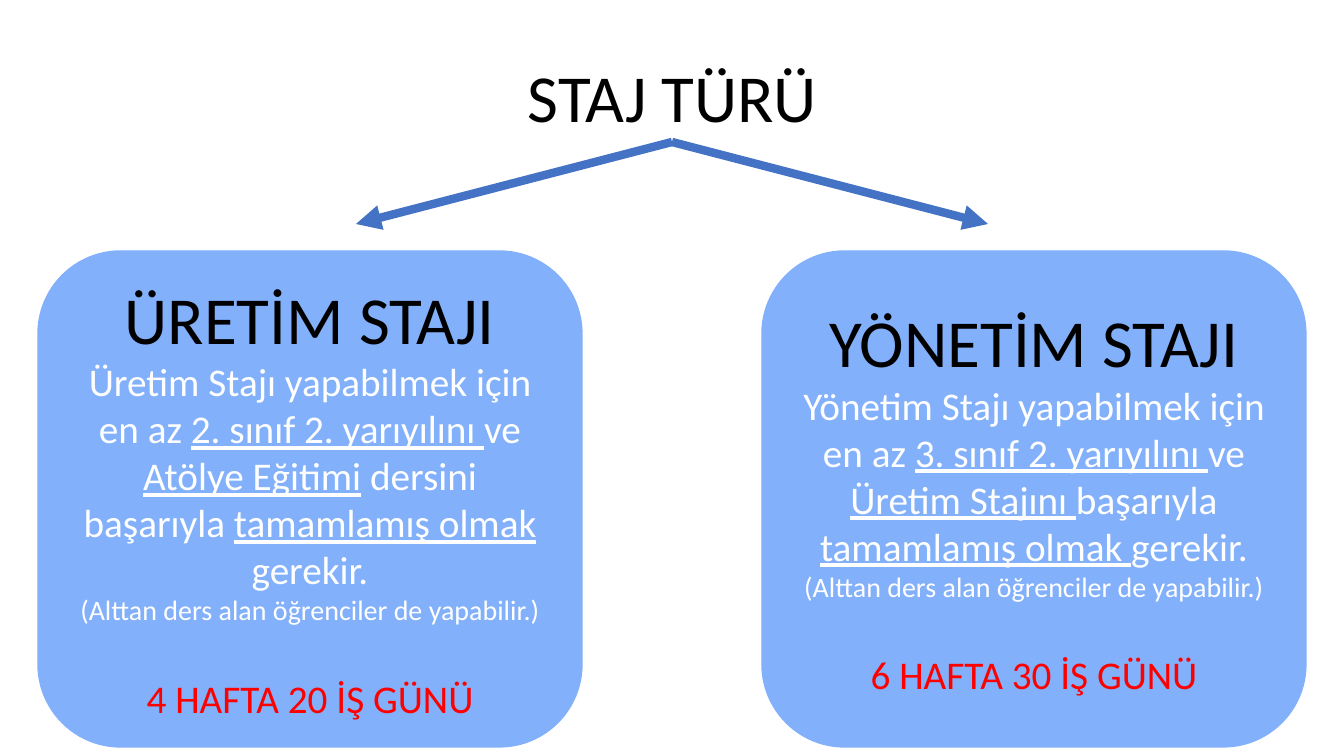
from dataclasses import dataclass

from lxml import etree
from pptx import Presentation
from pptx import util as u
from pptx.dml.color import RGBColor
from pptx.enum import shapes, text
from pptx.oxml.ns import qn

PX = 914400 / 100.8
FONT = "Calibri"
COLOURS = {
    "heading": "000000",
    "body": "FFFFFF",
    "duration": "FF0000",
    "card": "82B0FA",
    "arrow": "4472C4",
}
HEADING_SIZE, BODY_SIZE, NOTE_SIZE = 48, 28, 20
DURATION_GAP = 34
CARD_TOP, CARD_WIDTH, CARD_HEIGHT = 251, 544, 496
FORK_X, FORK_Y, ARROW_END_Y = 672, 142, 224
NOTE = "(Alttan ders alan öğrenciler de yapabilir.)"


@dataclass
class Span:
    text: str
    underline: bool = False


@dataclass
class Internship:
    left: int
    arrow_x: int
    heading: str
    rule: list[Span]
    duration: str


INTERNSHIPS = [
    Internship(
        38, 356, "ÜRETİM STAJI",
        [
            Span("Üretim Stajı yapabilmek için en az "),
            Span("2. sınıf 2. yarıyılını ", True),
            Span("ve "),
            Span("Atölye Eğitimi", True),
            Span(" dersini başarıyla "),
            Span("tamamlamış olmak ", True),
            Span("gerekir."),
        ],
        "4 HAFTA 20 İŞ GÜNÜ",
    ),
    Internship(
        762, 988, "YÖNETİM STAJI",
        [
            Span("Yönetim Stajı yapabilmek için en az "),
            Span("3. sınıf 2. yarıyılını ", True),
            Span("ve"),
            Span(" Üretim Stajını ", True),
            Span("başarıyla"),
            Span(" tamamlamış olmak ", True),
            Span("gerekir."),
        ],
        "6 HAFTA 30 İŞ GÜNÜ",
    ),
]


def px(length: int) -> u.Emu:
    return u.Emu(round(length * PX))


def colour(name: str) -> RGBColor:
    return RGBColor.from_string(COLOURS[name])


def write_paragraph(para, spans: list[Span], size: int, colour_name: str) -> None:
    para.alignment = text.PP_ALIGN.CENTER
    for span in spans:
        run = para.add_run()
        run.text = span.text
        run.font.name = FONT
        run.font.size = u.Pt(size)
        run.font.color.rgb = colour(colour_name)
        if span.underline:
            run.font.underline = True


def add_title(page, words: str) -> None:
    title = page.shapes.title
    title.left, title.top, title.width, title.height = map(px, (503, 50, 339, 92))
    frame = title.text_frame
    frame.auto_size = text.MSO_AUTO_SIZE.NONE
    frame.vertical_anchor = text.MSO_ANCHOR.MIDDLE
    write_paragraph(frame.paragraphs[0], [Span(words)], HEADING_SIZE, "heading")


def add_arrow(page, end_x: int) -> None:
    arrow = page.shapes.add_connector(
        shapes.MSO_CONNECTOR.STRAIGHT,
        px(FORK_X), px(FORK_Y), px(end_x), px(ARROW_END_Y),
    )
    arrow.line.color.rgb = colour("arrow")
    arrow.line.width = u.Pt(6)
    properties = arrow.line._get_or_add_ln()
    etree.SubElement(properties, qn("a:tailEnd"), type="triangle")
    etree.SubElement(properties.getparent(), qn("a:effectLst"))


def add_card(page, internship: Internship) -> None:
    card = page.shapes.add_shape(
        shapes.MSO_SHAPE.ROUNDED_RECTANGLE,
        px(internship.left), px(CARD_TOP), px(CARD_WIDTH), px(CARD_HEIGHT),
    )
    card.shadow.inherit = False
    card.fill.solid()
    card.fill.fore_color.rgb = colour("card")
    card.line.color.rgb = colour("card")
    card.line.width = u.Pt(1)

    frame = card.text_frame
    frame.word_wrap = True
    frame.vertical_anchor = text.MSO_ANCHOR.MIDDLE
    write_paragraph(
        frame.paragraphs[0], [Span(internship.heading)], HEADING_SIZE, "heading"
    )
    write_paragraph(frame.add_paragraph(), internship.rule, BODY_SIZE, "body")
    write_paragraph(frame.add_paragraph(), [Span(NOTE)], NOTE_SIZE, "body")
    duration = frame.add_paragraph()
    duration.space_before = u.Pt(DURATION_GAP)
    write_paragraph(duration, [Span(internship.duration)], BODY_SIZE, "duration")


def main() -> None:
    deck = Presentation()
    deck.slide_width, deck.slide_height = px(1344), px(756)
    page = deck.slides.add_slide(deck.slide_layouts.get_by_name("Title Only"))

    # Title and the fork below it
    add_title(page, "STAJ TÜRÜ")
    for internship in INTERNSHIPS:
        add_arrow(page, internship.arrow_x)

    # One card for each kind of internship
    for internship in INTERNSHIPS:
        add_card(page, internship)

    deck.save("out.pptx")


if __name__ == "__main__":
    main()
